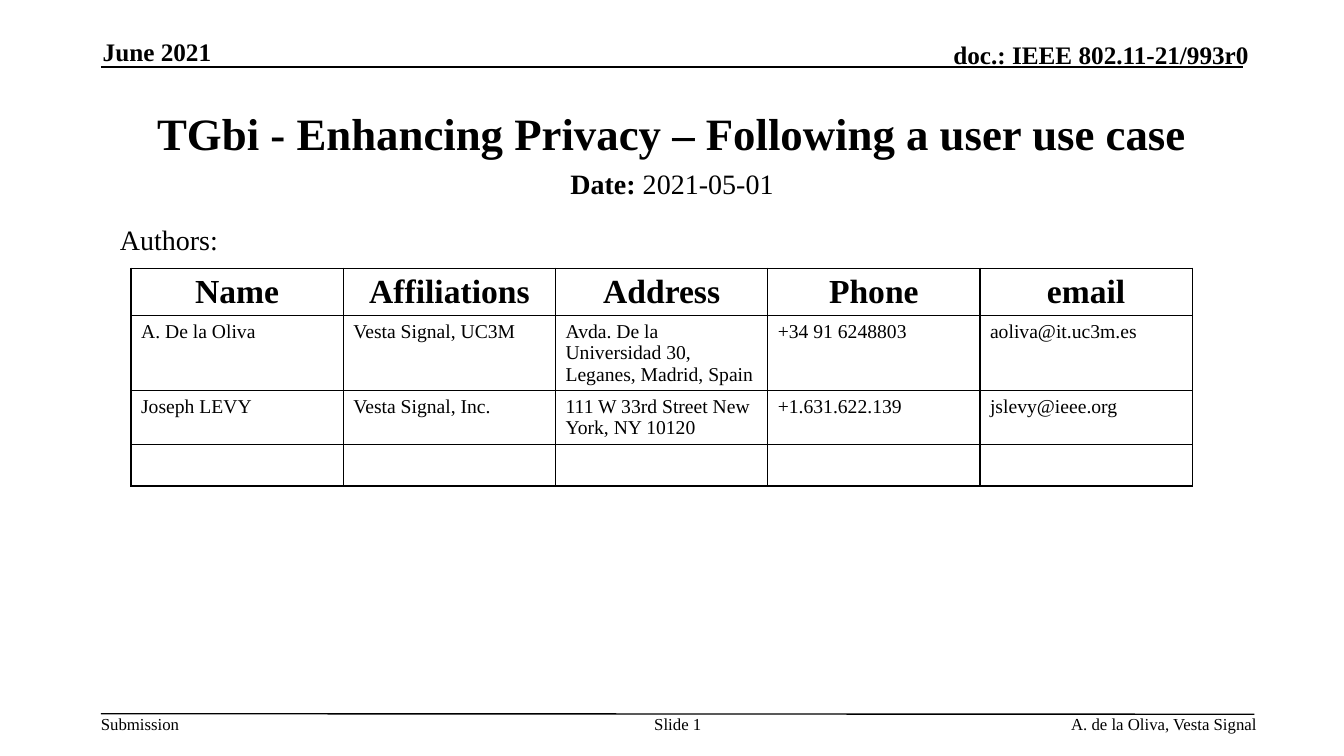
from dataclasses import dataclass

from lxml import etree
from pptx import Presentation
from pptx import util as u
from pptx.dml.color import RGBColor
from pptx.enum import shapes, text
from pptx.oxml import ns

Pt = u.Pt
LEFT, CENTER, RIGHT = text.PP_ALIGN.LEFT, text.PP_ALIGN.CENTER, text.PP_ALIGN.RIGHT
TOP, MIDDLE, BOTTOM = text.MSO_ANCHOR.TOP, text.MSO_ANCHOR.MIDDLE, text.MSO_ANCHOR.BOTTOM


@dataclass(frozen=True)
class Theme:
    font: str = "Times New Roman"
    ink: str = "000000"
    paper: str = "FFFFFF"
    title: float = 32
    heading: float = 24
    body: float = 20
    header: float = 18
    cell: float = 14
    footer: float = 12
    rule: float = 1


@dataclass(frozen=True)
class Span:
    words: str
    size: float
    bold: bool = False


@dataclass(frozen=True)
class Label:
    left: float
    top: float
    width: float
    height: float
    spans: tuple[Span, ...]
    align: text.PP_ALIGN = LEFT
    anchor: text.MSO_ANCHOR = TOP
    margins: tuple[float, float] = (0, 0)
    wrap: bool = True


@dataclass(frozen=True)
class Rule:
    start: tuple[float, float]
    end: tuple[float, float]


THEME = Theme()
INSET = (7.2, 3.6)

# Running header and footer
RULES = (
    Rule((72, 48), (888, 48)),
    Rule((72, 509.8), (896, 510.2)),
)
LABELS = (
    Label(73.4, 25.9, 196.6, 21.6, (Span("June 2021", THEME.header, True),), anchor=BOTTOM),
    Label(525, 28.1, 367, 21.6, (Span("doc.: IEEE 802.11-21/993r0", THEME.header, True),),
          RIGHT, BOTTOM),
    Label(72, 510, 57, 14.4, (Span("Submission", THEME.footer),), wrap=False),
    Label(456.5, 510, 55.4, 28.8, (Span("Slide 1", THEME.footer),), CENTER),
    Label(563.8, 510, 334, 14.4, (Span("A. de la Oliva, Vesta Signal", THEME.footer),), RIGHT),
    Label(78.5, 155.5, 113.8, 30.2, (Span("Authors:", THEME.body),), margins=INSET),
)

# Title block
TITLE = Label(72, 36.7, 816, 116,
              (Span("TGbi - Enhancing Privacy – Following a user use case", THEME.title, True),),
              CENTER, MIDDLE, INSET)
DATE = Label(144, 115.2, 672, 37.4,
             (Span("Date:", THEME.body, True), Span(" 2021-05-01", THEME.body)),
             CENTER, margins=INSET)

# Author table
AUTHORS = (
    ("Name", "Affiliations", "Address", "Phone", "email"),
    ("A. De la Oliva", "Vesta Signal, UC3M", "Avda. De la Universidad 30, Leganes, Madrid, Spain",
     "+34 91 6248803", "aoliva@it.uc3m.es"),
    ("Joseph LEVY", "Vesta Signal, Inc.", "111 W 33rd Street New York, NY 10120",
     "+1.631.622.139", "jslevy@ieee.org"),
    ("",) * 5,
)
TABLE_LEFT, TABLE_TOP, COLUMN_WIDTH = 93.6, 191.5, 151.6
ROW_HEIGHTS = (34, 53.5, 38.5, 29.5)


def add_spans(para, spans: tuple[Span, ...], align: text.PP_ALIGN) -> None:
    para.alignment = align
    for span in spans:
        run = para.add_run()
        run.text = span.words
        run.font.name = THEME.font
        run.font.size = Pt(span.size)
        run.font.bold = span.bold
        run.font.color.rgb = RGBColor.from_string(THEME.ink)


def fill_box(box, label: Label) -> None:
    box.left, box.top = Pt(label.left), Pt(label.top)
    box.width, box.height = Pt(label.width), Pt(label.height)
    frame = box.text_frame
    frame.auto_size = text.MSO_AUTO_SIZE.NONE
    frame.word_wrap = label.wrap
    frame.vertical_anchor = label.anchor
    frame.margin_left = frame.margin_right = Pt(label.margins[0])
    frame.margin_top = frame.margin_bottom = Pt(label.margins[1])
    para = frame.paragraphs[0]
    para.space_before = Pt(0)
    add_spans(para, label.spans, label.align)


def draw_rule(page, rule: Rule) -> None:
    line = page.shapes.add_connector(shapes.MSO_CONNECTOR.STRAIGHT,
                                     *map(Pt, rule.start + rule.end))
    line.line.color.rgb = RGBColor.from_string(THEME.ink)
    line.line.width = Pt(THEME.rule)
    etree.SubElement(line._element.spPr, ns.qn("a:effectLst"))


def add_borders(cell) -> None:
    properties = cell._tc.get_or_add_tcPr()
    for side in ("a:lnL", "a:lnR", "a:lnT", "a:lnB"):
        border = etree.SubElement(properties, ns.qn(side), w=str(Pt(THEME.rule)))
        fill = etree.SubElement(border, ns.qn("a:solidFill"))
        etree.SubElement(fill, ns.qn("a:srgbClr"), val=THEME.ink)


def draw_authors(page) -> None:
    columns = len(AUTHORS[0])
    table = page.shapes.add_table(len(AUTHORS), columns, Pt(TABLE_LEFT), Pt(TABLE_TOP),
                                  Pt(COLUMN_WIDTH * columns), Pt(sum(ROW_HEIGHTS))).table
    table.horz_banding = False
    for column in table.columns:
        column.width = Pt(COLUMN_WIDTH)
    for index, (row, height, entries) in enumerate(zip(table.rows, ROW_HEIGHTS, AUTHORS)):
        row.height = Pt(height)
        heading = index == 0
        size = THEME.heading if heading else THEME.cell
        for cell, words in zip(row.cells, entries):
            add_borders(cell)
            cell.fill.background()
            if words:
                add_spans(cell.text_frame.paragraphs[0], (Span(words, size, heading),),
                          CENTER if heading else LEFT)


def main() -> None:
    deck = Presentation()
    deck.slide_width, deck.slide_height = Pt(960), Pt(540)
    page = deck.slides.add_slide(deck.slide_layouts[0])
    page.background.fill.solid()
    page.background.fill.fore_color.rgb = RGBColor.from_string(THEME.paper)

    for rule in RULES:
        draw_rule(page, rule)
    fill_box(page.shapes.title, TITLE)
    fill_box(page.placeholders[1], DATE)
    for label in LABELS:
        box = page.shapes.add_textbox(0, 0, 0, 0)
        fill_box(box, label)
    draw_authors(page)

    deck.save("out.pptx")


if __name__ == "__main__":
    main()
